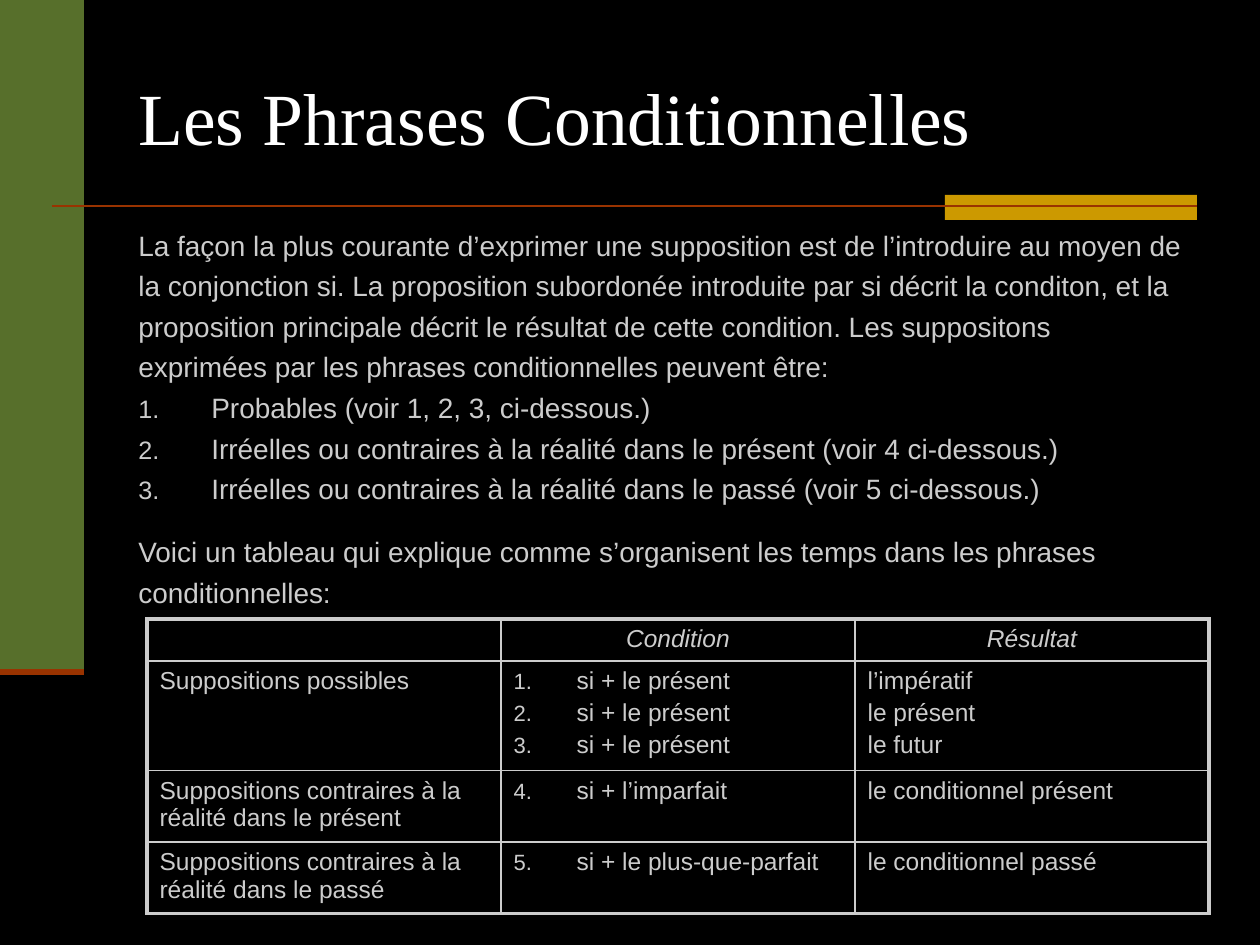
from lxml import etree
from pptx import Presentation
from pptx import util as u
from pptx.dml.color import RGBColor
from pptx.enum import shapes, text
from pptx.oxml.ns import qn

BLACK = RGBColor(0x00, 0x00, 0x00)
WHITE = RGBColor(0xFF, 0xFF, 0xFF)
GREY = RGBColor(0xCC, 0xCC, 0xCC)
GREEN = RGBColor(0x57, 0x6F, 0x2B)
GOLD = RGBColor(0xCC, 0x99, 0x00)
RUST = RGBColor(0x99, 0x33, 0x00)

INTRODUCTION = [
    "La façon la plus courante d’exprimer une supposition est de l’introduire au moyen de",
    "la conjonction si. La proposition subordonée introduite par si décrit la conditon, et la",
    "proposition principale décrit le résultat de cette condition. Les suppositons",
    "exprimées par les phrases conditionnelles peuvent être:",
]
KINDS = [
    "Probables (voir 1, 2, 3, ci-dessous.)",
    "Irréelles ou contraires à la réalité dans le présent (voir 4 ci-dessous.)",
    "Irréelles ou contraires à la réalité dans le passé (voir 5 ci-dessous.)",
]
TRANSITION = [
    "Voici un tableau qui explique comme s’organisent les temps dans les phrases",
    "conditionnelles:",
]
HEADINGS = ["", "Condition", "Résultat"]
TENSES = [
    ("Suppositions possibles", ["si + le présent"] * 3,
     ["l’impératif", "le présent", "le futur"]),
    ("Suppositions contraires à la réalité dans le présent",
     ["si + l’imparfait"], ["le conditionnel présent"]),
    ("Suppositions contraires à la réalité dans le passé",
     ["si + le plus-que-parfait"], ["le conditionnel passé"]),
]


def px(value):
    return u.Emu(round(value * 914400 / 126))


class SlideBuilder:
    serif = "Times New Roman"
    sans = "Arial"

    def __init__(self, presentation):
        self.slide = presentation.slides.add_slide(presentation.slide_layouts[6])
        fill = self.slide.background.fill
        fill.solid()
        fill.fore_color.rgb = BLACK

    def bar(self, left, top, width, height, color):
        shape = self.slide.shapes.add_shape(
            shapes.MSO_SHAPE.RECTANGLE, px(left), px(top), px(width), px(height))
        shape.shadow.inherit = False
        shape.fill.solid()
        shape.fill.fore_color.rgb = color
        shape.line.fill.background()

    def rule(self, left, right, y, weight):
        line = self.slide.shapes.add_connector(
            shapes.MSO_CONNECTOR.STRAIGHT, px(left), px(y), px(right), px(y))
        line.line.color.rgb = RUST
        line.line.width = u.Pt(weight)
        etree.SubElement(line._element.spPr, qn("a:effectLst"))

    def text_box(self, left, top, width, height, lines, anchor=text.MSO_ANCHOR.TOP):
        frame = self.slide.shapes.add_textbox(
            px(left), px(top), px(width), px(height)).text_frame
        frame.word_wrap = True
        frame.vertical_anchor = anchor
        frame.text = "\n".join(lines)
        return frame.paragraphs

    def format(self, paragraphs, font, size, color, gap=0, italic=False):
        for index, paragraph in enumerate(paragraphs):
            paragraph.space_before = u.Pt(gap if index else 0)
            for run in paragraph.runs:
                run.font.name = font
                run.font.size = u.Pt(size)
                run.font.italic = italic
                run.font.color.rgb = color
            if not paragraph.runs:
                etree.SubElement(paragraph._p, qn("a:endParaRPr"), sz=str(size * 100))

    def number(self, paragraphs, indent, start=1):
        for paragraph in paragraphs:
            properties = paragraph._p.get_or_add_pPr()
            properties.set("marL", str(px(indent)))
            properties.set("indent", str(-px(indent)))
            color = etree.SubElement(properties, qn("a:buClr"))
            etree.SubElement(color, qn("a:srgbClr"), val=str(GREY))
            etree.SubElement(properties, qn("a:buSzPct"), val="90000")
            etree.SubElement(properties, qn("a:buFont"), typeface=self.sans)
            etree.SubElement(properties, qn("a:buAutoNum"),
                             type="arabicPeriod", startAt=str(start))

    def cell(self, cell, lines, outer, start=None, heading=False):
        properties = cell._tc.get_or_add_tcPr()
        for side, is_outer in zip("LRTB", outer):
            border = etree.SubElement(properties, qn(f"a:ln{side}"),
                                      w=str(u.Pt(2.25 if is_outer else 1)))
            fill = etree.SubElement(border, qn("a:solidFill"))
            etree.SubElement(fill, qn("a:srgbClr"), val=str(GREY))
        cell.fill.background()
        cell.text_frame.text = "\n".join(lines)
        paragraphs = cell.text_frame.paragraphs
        if start:
            self.number(paragraphs, 63, start)
        if heading:
            paragraphs[0].alignment = text.PP_ALIGN.CENTER
        self.format(paragraphs, self.sans, 14, GREY, gap=2.5, italic=heading)

    def table(self, left, top, column_width, heights, headings, tenses):
        columns = len(headings)
        table = self.slide.shapes.add_table(
            len(heights), columns, px(left), px(top),
            px(column_width * columns), px(sum(heights))).table
        table.first_row = False
        table.horz_banding = False
        for column in table.columns:
            column.width = px(column_width)
        for row, height in zip(table.rows, heights):
            row.height = px(height)
        rows = [[[heading] for heading in headings]]
        rows += [[[label], conditions, results] for label, conditions, results in tenses]
        start = 1
        for r, row in enumerate(rows):
            for c, lines in enumerate(row):
                outer = (c == 0, c == columns - 1, r == 0, r == len(rows) - 1)
                numbered = r > 0 and c == 1
                self.cell(table.cell(r, c), lines, outer,
                          start if numbered else None, heading=r == 0)
                if numbered:
                    start += len(lines)


def main():
    presentation = Presentation()
    presentation.slide_width = px(1260)
    presentation.slide_height = px(945)
    builder = SlideBuilder(presentation)

    builder.bar(0, 0, 84, 672, GREEN)
    builder.bar(945, 195, 252, 25, GOLD)
    builder.rule(52, 1197, 206, 1.5)
    builder.rule(0, 84, 672, 3.5)

    title = builder.text_box(126, 38, 1071, 157, ["Les Phrases Conditionnelles"],
                             text.MSO_ANCHOR.MIDDLE)
    builder.format(title, builder.serif, 42, WHITE)

    body = builder.text_box(126, 222, 1102, 683, INTRODUCTION + KINDS + TRANSITION)
    first, last = len(INTRODUCTION), len(INTRODUCTION + KINDS)
    builder.number(body[first:last], 73)
    builder.format(body, builder.sans, 16, GREY, gap=4)
    body[last].space_before = u.Pt(17)

    builder.table(147, 619, 354, [41, 105, 68, 68], HEADINGS, TENSES)
    presentation.save("out.pptx")


if __name__ == "__main__":
    main()
